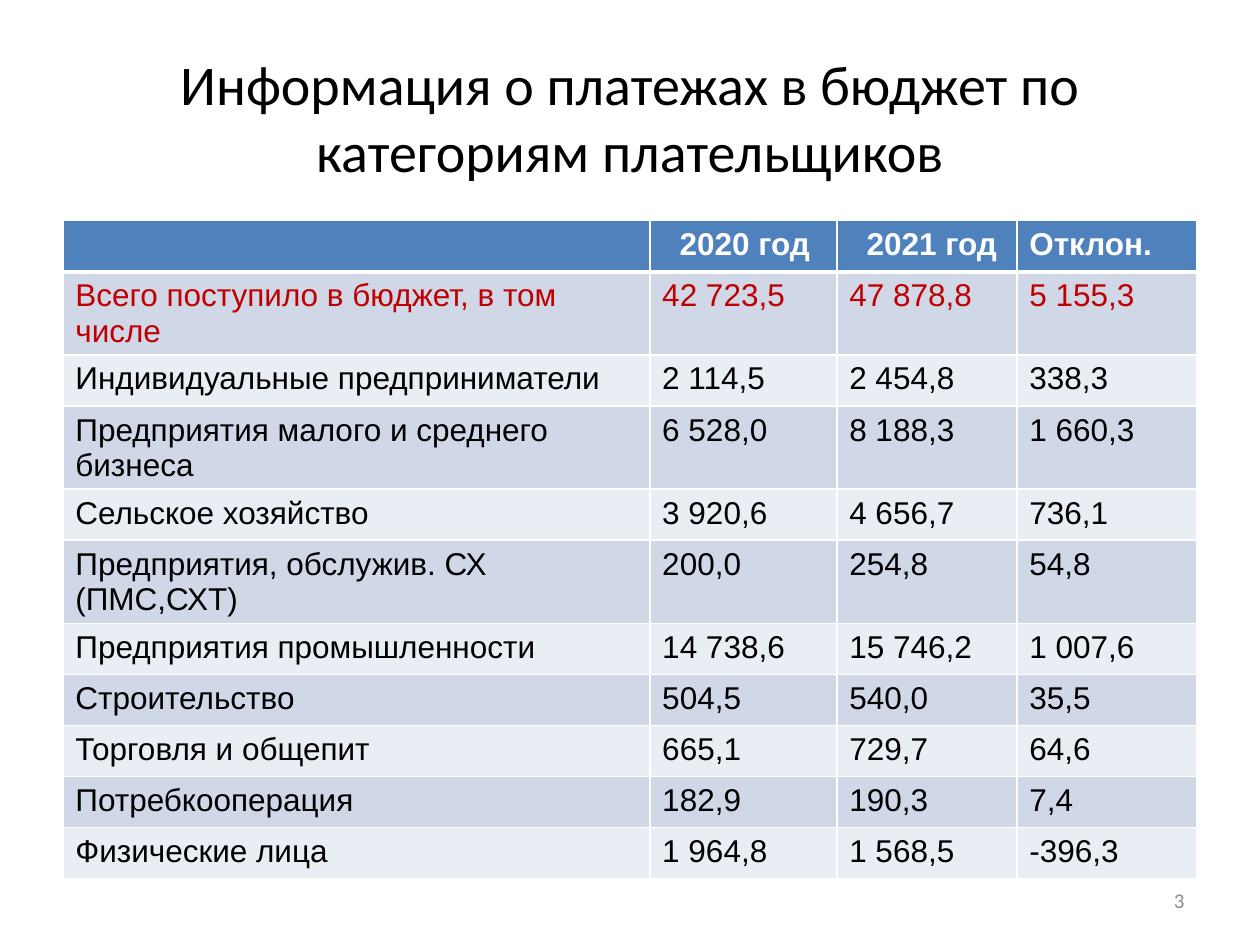
import dataclasses

import lxml.etree
import pptx
import pptx.dml.color
import pptx.enum.text
import pptx.oxml.ns
import pptx.util

Cm = pptx.util.Cm
ALIGN = pptx.enum.text.PP_ALIGN
MIDDLE = pptx.enum.text.MSO_ANCHOR.MIDDLE

COLORS = {
    "black": "000000",
    "white": "FFFFFF",
    "total": "C00000",
    "number": "8C8C8C",
    "header": "4F81BD",
    "odd_band": "D0D8E8",
    "even_band": "E9EDF4",
}


@dataclasses.dataclass(frozen=True)
class Payer:
    category: str
    year_2020: str
    year_2021: str
    deviation: str


HEADINGS = Payer("", "2020 год", "2021 год", "Отклон.")
PAYERS = [
    Payer("Всего поступило в бюджет, в том числе", "42 723,5", "47 878,8", "5 155,3"),
    Payer("Индивидуальные предприниматели", "2 114,5", "2 454,8", "338,3"),
    Payer("Предприятия малого и среднего бизнеса", "6 528,0", "8 188,3", "1 660,3"),
    Payer("Сельское хозяйство", "3 920,6", "4 656,7", "736,1"),
    Payer("Предприятия, обслужив. СХ (ПМС,СХТ)", "200,0", "254,8", "54,8"),
    Payer("Предприятия промышленности", "14 738,6", "15 746,2", "1 007,6"),
    Payer("Строительство", "504,5", "540,0", "35,5"),
    Payer("Торговля и общепит", "665,1", "729,7", "64,6"),
    Payer("Потребкооперация", "182,9", "190,3", "7,4"),
    Payer("Физические лица", "1 964,8", "1 568,5", "-396,3"),
]
COLUMN_WIDTHS = [11.83, 3.77, 3.63, 3.63]
ROW_HEIGHT = 1.03
YEAR_INDENT = 0.35


def rgb(color: str) -> pptx.dml.color.RGBColor:
    return pptx.dml.color.RGBColor.from_string(COLORS[color])


def write_text(frame, text: str, *, size: float = 18, font: str = "Arial",
               color: str = "black", bold: bool = False, align=ALIGN.LEFT) -> None:
    paragraph = frame.paragraphs[0]
    paragraph.alignment = align
    if text:
        run = paragraph.add_run()
        run.text = text
        run.font.name = font
        run.font.size = pptx.util.Pt(size)
        run.font.bold = bold
        run.font.color.rgb = rgb(color)


def add_label(slide, text: str, left: float, top: float, width: float,
              height: float, **text_format) -> None:
    frame = slide.shapes.add_textbox(Cm(left), Cm(top), Cm(width), Cm(height)).text_frame
    frame.word_wrap = True
    frame.vertical_anchor = MIDDLE
    write_text(frame, text, **text_format)


def add_borders(cell, top: float, bottom: float) -> None:
    properties = cell._tc.get_or_add_tcPr()
    for side, points in (("L", 1), ("R", 1), ("T", top), ("B", bottom)):
        line = lxml.etree.SubElement(properties, pptx.oxml.ns.qn(f"a:ln{side}"),
                                     w=str(pptx.util.Pt(points)))
        fill = lxml.etree.SubElement(line, pptx.oxml.ns.qn("a:solidFill"))
        lxml.etree.SubElement(fill, pptx.oxml.ns.qn("a:srgbClr"), val=COLORS["white"])


def add_payments_table(slide, left: float, top: float) -> None:
    records = [HEADINGS, *PAYERS]
    table = slide.shapes.add_table(
        len(records), len(COLUMN_WIDTHS), Cm(left), Cm(top),
        Cm(sum(COLUMN_WIDTHS)), Cm(ROW_HEIGHT * len(records))).table
    for column, width in zip(table.columns, COLUMN_WIDTHS):
        column.width = Cm(width)
    for index, record in enumerate(records):
        table.rows[index].height = Cm(ROW_HEIGHT)
        is_header = index == 0
        band = "header" if is_header else "odd_band" if index % 2 else "even_band"
        ink = {0: "white", 1: "total"}.get(index, "black")
        for position, text in enumerate(dataclasses.astuple(record)):
            cell = table.cell(index, position)
            is_year = is_header and position in (1, 2)
            cell.margin_left = Cm(0.25 + (YEAR_INDENT if is_year else 0))
            cell.margin_right = Cm(0.25)
            cell.margin_top = Cm(0.13)
            cell.margin_bottom = Cm(0.02)
            add_borders(cell, top=3 if index == 1 else 1, bottom=3 if is_header else 1)
            cell.fill.solid()
            cell.fill.fore_color.rgb = rgb(band)
            write_text(cell.text_frame, text, color=ink, bold=is_header)


def main() -> None:
    presentation = pptx.Presentation()
    presentation.slide_width = Cm(25.4)
    presentation.slide_height = Cm(19.05)
    slide = presentation.slides.add_slide(presentation.slide_layouts[6])
    add_label(slide, "Информация о платежах в бюджет по категориям плательщиков",
              1.27, 0.76, 22.86, 3.18, size=32, font="Calibri", align=ALIGN.CENTER)
    add_payments_table(slide, 1.27, 4.45)
    add_label(slide, "3", 18.2, 17.65, 5.93, 1.01, size=12, font="Calibri",
              color="number", align=ALIGN.RIGHT)
    presentation.save("out.pptx")


if __name__ == "__main__":
    main()
